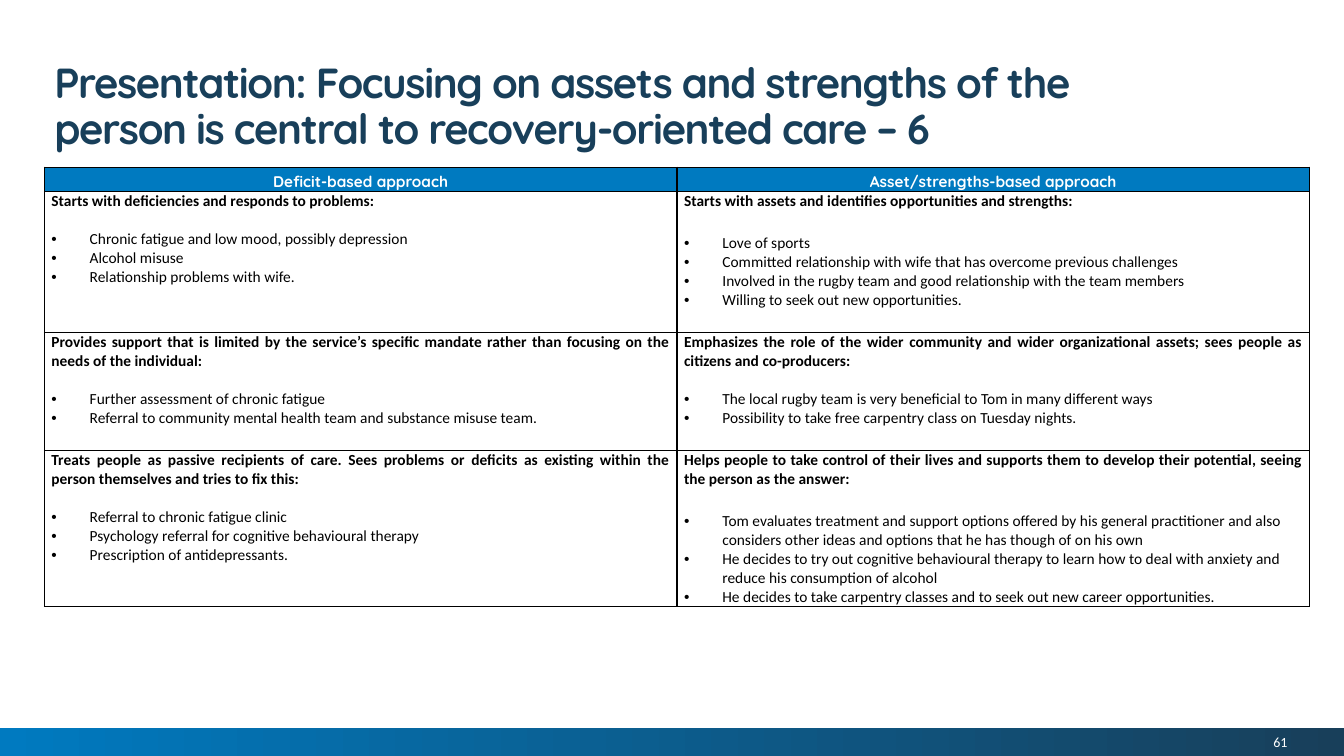
from dataclasses import dataclass

from lxml.etree import SubElement
from pptx import Presentation
from pptx.dml.color import RGBColor
from pptx.enum.shapes import MSO_SHAPE as Preset
from pptx.enum.text import MSO_ANCHOR as Anchor, PP_ALIGN as Align
from pptx.oxml.ns import qn
from pptx.util import Emu, Inches, Pt

WIDTH, HEIGHT = Inches(13.33), Inches(7.5)
COLOURS = {"blue": "007AC0", "navy": "183F5A", "white": "FFFFFF", "black": "000000"}
HEADING_FONT, BODY_FONT = "Quicksand", "Calibri"
TEXT_SIZE = 11
CELL_INSET = Inches(0.07)
BULLET_INDENT = Inches(0.38)
NORMAL_GAP, WIDE_GAP = 13.5, 16.5


@dataclass(frozen=True)
class Area:
    left: float
    top: float
    width: float
    height: float

    def box(self) -> tuple:
        return (Emu(round(self.left * WIDTH)), Emu(round(self.top * HEIGHT)),
                Emu(round(self.width * WIDTH)), Emu(round(self.height * HEIGHT)))


@dataclass(frozen=True)
class Approach:
    principle: str
    examples: tuple
    gap: float = NORMAL_GAP


FOOTER = Area(0, 7.22 / 7.5, 1, 0.28 / 7.5)
PAGE_NUMBER = Area(10.97 / 13.33, 7.24 / 7.5, 1.8 / 13.33, 0.24 / 7.5)
TITLE = Area(0.44 / 13.33, 0.55 / 7.5, 10.71 / 13.33, 0.47 / 7.5)
COMPARISON = Area(0.44 / 13.33, 1.66 / 7.5, 12.55 / 13.33, 4.36 / 7.5)
ROW_SHARES = (0.24 / 4.36, 1.4 / 4.36, 1.17 / 4.36, 1.55 / 4.36)

HEADINGS = ("Deficit-based approach", "Asset/strengths-based approach")
APPROACHES = (
    (
        Approach("Starts with deficiencies and responds to problems:",
                 ("Chronic fatigue and low mood, possibly depression",
                  "Alcohol misuse",
                  "Relationship problems with wife.")),
        Approach("Starts with assets and identifies opportunities and strengths:",
                 ("Love of sports",
                  "Committed relationship with wife that has overcome previous challenges",
                  "Involved in the rugby team and good relationship with the team members",
                  "Willing to seek out new opportunities."), WIDE_GAP),
    ),
    (
        Approach("Provides support that is limited by the service’s specific mandate "
                 "rather than focusing on the needs of the individual:",
                 ("Further assessment of chronic fatigue",
                  "Referral to community mental health team and substance misuse team.")),
        Approach("Emphasizes the role of the wider community and wider organizational "
                 "assets; sees people as citizens and co-producers:",
                 ("The local rugby team is very beneficial to Tom in many different ways",
                  "Possibility to take free carpentry class on Tuesday nights.")),
    ),
    (
        Approach("Treats people as passive recipients of care. Sees problems or deficits "
                 "as existing within the person themselves and tries to fix this:",
                 ("Referral to chronic fatigue clinic",
                  "Psychology referral for cognitive behavioural therapy",
                  "Prescription of antidepressants.")),
        Approach("Helps people to take control of their lives and supports them to develop "
                 "their potential, seeing the person as the answer:",
                 ("Tom evaluates treatment and support options offered by his general "
                  "practitioner and also considers other ideas and options that he has "
                  "though of on his own",
                  "He decides to try out cognitive behavioural therapy to learn how to deal "
                  "with anxiety and reduce his consumption of alcohol",
                  "He decides to take carpentry classes and to seek out new career "
                  "opportunities."), WIDE_GAP),
    ),
)


def colour(name: str) -> RGBColor:
    return RGBColor.from_string(COLOURS[name])


def add_run(paragraph, words: str, size: float, font: str, ink: str, bold: bool = False):
    run = paragraph.add_run()
    run.text = words
    run.font.size = Pt(size)
    run.font.name = font
    run.font.bold = bold
    run.font.color.rgb = colour(ink)
    return run


def add_footer(slide) -> None:
    band = slide.shapes.add_shape(Preset.RECTANGLE, *FOOTER.box())
    band.shadow.inherit = False
    band.line.fill.background()
    band.fill.gradient()
    band.fill.gradient_angle = 0
    for stop, position, shade in zip(band.fill.gradient_stops, (0, 1), ("blue", "navy")):
        stop.position = position
        stop.color.rgb = colour(shade)

    number = slide.shapes.add_textbox(*PAGE_NUMBER.box()).text_frame
    number.word_wrap = True
    number.vertical_anchor = Anchor.MIDDLE
    number.margin_left = number.margin_right = number.margin_top = number.margin_bottom = 0
    number.paragraphs[0].alignment = Align.RIGHT
    add_run(number.paragraphs[0], "61", 10, BODY_FONT, "white")


def add_title(slide) -> None:
    title = slide.shapes.add_textbox(*TITLE.box()).text_frame
    title.word_wrap = True
    line = title.paragraphs[0]
    line.line_spacing = Pt(33)
    run = add_run(line, "Presentation: Focusing on assets and strengths of the person is "
                  "central to recovery-oriented care – 6", 30, HEADING_FONT, "navy", True)
    run.font._element.set("spc", "-100")


def add_borders(cell) -> None:
    properties = cell._tc.get_or_add_tcPr()
    for place, side in enumerate(("a:lnL", "a:lnR", "a:lnT", "a:lnB")):
        border = SubElement(properties, qn(side), w=str(Pt(1)))
        SubElement(SubElement(border, qn("a:solidFill")), qn("a:srgbClr"),
                   val=COLOURS["black"])
        properties.insert(place, border)


def prepare_cell(cell) -> None:
    cell.margin_left = cell.margin_right = CELL_INSET
    cell.margin_top = cell.margin_bottom = 0
    cell.fill.background()
    add_borders(cell)


def fill_heading(cell, heading: str) -> None:
    prepare_cell(cell)
    cell.fill.solid()
    cell.fill.fore_color.rgb = colour("blue")
    cell.vertical_anchor = Anchor.MIDDLE
    line = cell.text_frame.paragraphs[0]
    line.alignment = Align.CENTER
    line.line_spacing = Pt(17)
    add_run(line, heading, TEXT_SIZE, HEADING_FONT, "white", True)


def fill_approach(cell, approach: Approach) -> None:
    prepare_cell(cell)
    principle = cell.text_frame.paragraphs[0]
    principle.alignment = Align.JUSTIFY
    principle.space_after = Pt(approach.gap)
    add_run(principle, approach.principle, TEXT_SIZE, BODY_FONT, "black", True)
    for example in approach.examples:
        item = cell.text_frame.add_paragraph()
        layout = item._p.get_or_add_pPr()
        layout.set("marL", str(BULLET_INDENT))
        layout.set("indent", str(-BULLET_INDENT))
        SubElement(layout, qn("a:buFont"), typeface="Arial")
        SubElement(layout, qn("a:buChar"), char="•")
        add_run(item, example, TEXT_SIZE, BODY_FONT, "black")


def add_comparison(slide) -> None:
    box = COMPARISON.box()
    table = slide.shapes.add_table(len(ROW_SHARES), len(HEADINGS), *box).table
    for row, share in zip(table.rows, ROW_SHARES):
        row.height = Emu(round(share * box[3]))
    for column, heading in enumerate(HEADINGS):
        fill_heading(table.cell(0, column), heading)
    for row, pair in enumerate(APPROACHES, start=1):
        for column, approach in enumerate(pair):
            fill_approach(table.cell(row, column), approach)


def main() -> None:
    deck = Presentation()
    deck.slide_width, deck.slide_height = WIDTH, HEIGHT
    slide = deck.slides.add_slide(deck.slide_layouts[6])
    add_footer(slide)
    add_title(slide)
    add_comparison(slide)
    deck.save("out.pptx")


if __name__ == "__main__":
    main()
